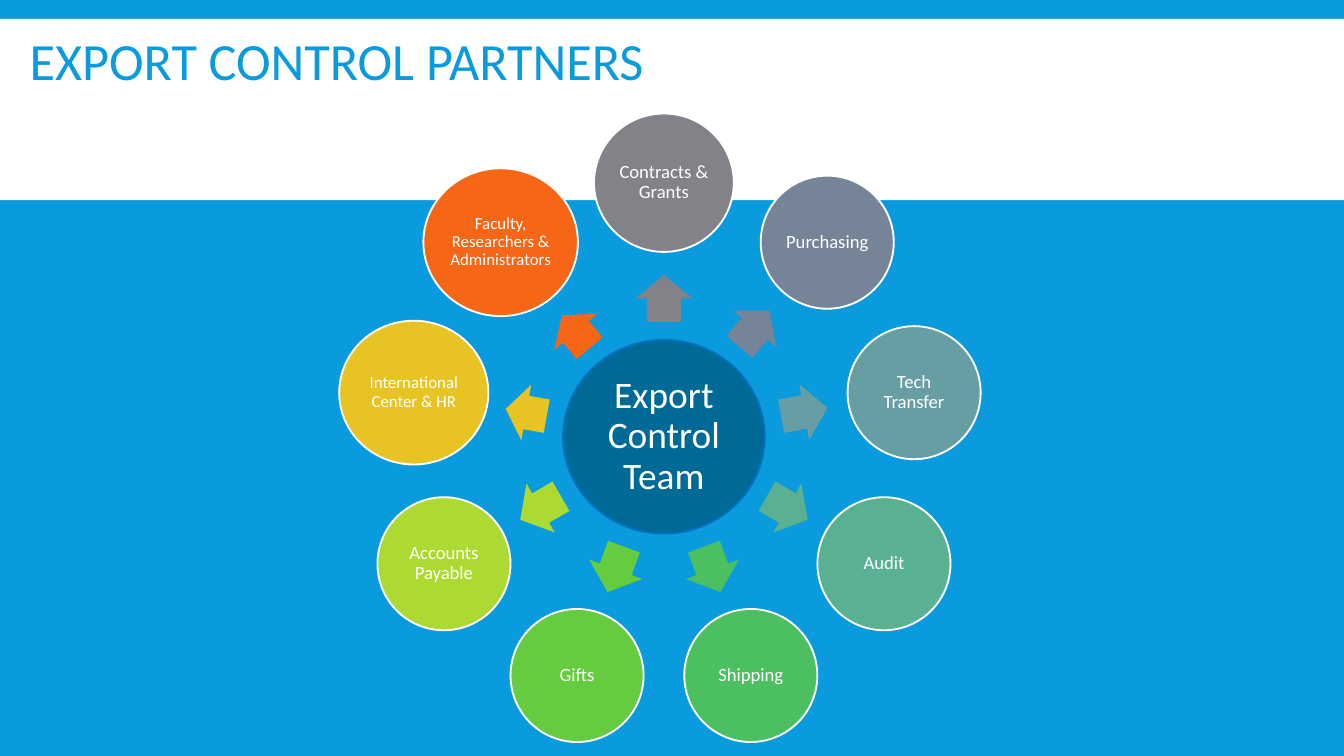
from math import cos, radians, sin

from pptx import Presentation
from pptx.dml.color import RGBColor
from pptx.enum.shapes import MSO_SHAPE
from pptx.enum.text import MSO_ANCHOR, MSO_AUTO_SIZE, PP_ALIGN
from pptx.util import Inches, Pt

OVAL, ARROW, RECT = MSO_SHAPE.OVAL, MSO_SHAPE.RIGHT_ARROW, MSO_SHAPE.RECTANGLE
MIDDLE = MSO_ANCHOR.MIDDLE
LEFT, CENTER = PP_ALIGN.LEFT, PP_ALIGN.CENTER
NO_FIT = MSO_AUTO_SIZE.NONE

FONT = "Calibri"
BLUE, WHITE = "099BDD", "FFFFFF"
TITLE_ONLY = 5

# Clockwise from the top:
# name, colour, circle width, circle height, text size, arrow length, arrow distance
PARTNERS = [
    ("Contracts & Grants", "828288", 1.04, 1.03, 10, 0.35, 1.03),
    ("Purchasing", "758496", 0.99, 0.99, 10, 0.35, 1.05),
    ("Tech Transfer", "679EA3", 0.99, 0.99, 10, 0.35, 1.06),
    ("Audit", "5AB191", 0.99, 0.99, 10, 0.35, 1.06),
    ("Shipping", "4CBF61", 0.99, 0.99, 10, 0.36, 1.05),
    ("Gifts", "66CC3F", 0.99, 0.99, 10, 0.36, 1.05),
    ("Accounts Payable", "ADDA32", 0.99, 0.99, 10, 0.35, 1.06),
    ("International Center & HR", "E7C324", 1.11, 1.07, 9, 0.31, 1.04),
    ("Faculty, Researchers & Administrators", "F56617", 1.15, 1.1, 9, 0.32, 1.02),
]


def color(hex_string):
    return RGBColor.from_string(hex_string)


def write(shape, text, size, hex_color=WHITE, align=CENTER, spacing=0.9, inset=None):
    frame = shape.text_frame
    frame.text = text
    frame.word_wrap = True
    frame.auto_size = NO_FIT
    frame.vertical_anchor = MIDDLE
    if inset is not None:
        frame.margin_left = frame.margin_right = Inches(inset)
        frame.margin_top = frame.margin_bottom = Inches(inset)
    paragraph = frame.paragraphs[0]
    paragraph.alignment = align
    paragraph.line_spacing = spacing
    font = paragraph.runs[0].font
    font.name, font.size = FONT, Pt(size)
    font.color.rgb = color(hex_color)


def add_centered(slide, preset, x, y, width, height, fill, line=None):
    """Add a preset shape centred on (x, y)."""
    shape = slide.shapes.add_shape(
        preset, Inches(x - width / 2), Inches(y - height / 2),
        Inches(width), Inches(height))
    shape.shadow.inherit = False
    shape.fill.solid()
    shape.fill.fore_color.rgb = color(fill)
    if line:
        shape.line.color.rgb = color(line)
        shape.line.width = Pt(1)
    else:
        shape.line.fill.background()
    return shape


def add_header(slide, left, top, width, height):
    # White band, kept behind the title
    band = add_centered(slide, RECT, left + width / 2, top + height / 2,
                        width, height, WHITE)
    title = slide.shapes.title
    title.element.addprevious(band.element)
    # Title
    title.left, title.top = Inches(left + 0.12), Inches(top - 0.03)
    title.width, title.height = Inches(7.71), Inches(0.74)
    write(title, "EXPORT CONTROL PARTNERS", 28, BLUE, LEFT, spacing=0.85)


def add_partner_wheel(slide, left, top, width, height):
    x, y = left + width / 2, top + height / 2
    ring_x, ring_y = width / 2, height / 2

    # Hub
    hub = add_centered(slide, OVAL, x, y, 1.5, 1.44, "006A96", "0070C0")
    write(hub, "Export Control Team", 20, inset=0.03)

    # Arrows and partner circles
    step = 360 / len(PARTNERS)
    for index, partner in enumerate(PARTNERS):
        name, fill, circle_w, circle_h, size, length, distance = partner
        angle = index * step - 90
        across, down = cos(radians(angle)), sin(radians(angle))

        arrow = add_centered(slide, ARROW, x + distance * across,
                             y + distance * down, length, 0.42, fill)
        arrow.adjustments[0], arrow.adjustments[1] = 0.6, 0.5
        arrow.rotation = angle % 360

        circle = add_centered(slide, OVAL, x + ring_x * across,
                              y + ring_y * down, circle_w, circle_h, fill, WHITE)
        write(circle, name, size, inset=0.01)


def main():
    deck = Presentation()
    # 16:9 page
    deck.slide_width = Inches(10)
    deck.slide_height = deck.slide_width * 9 // 16
    slide = deck.slides.add_slide(deck.slide_layouts[TITLE_ONLY])
    slide.background.fill.solid()
    slide.background.fill.fore_color.rgb = color(BLUE)

    add_header(slide, 0, 0.14, 10, 1.35)
    add_partner_wheel(slide, 3.05, 1.36, 3.78, 3.78)
    deck.save("out.pptx")


if __name__ == "__main__":
    main()
